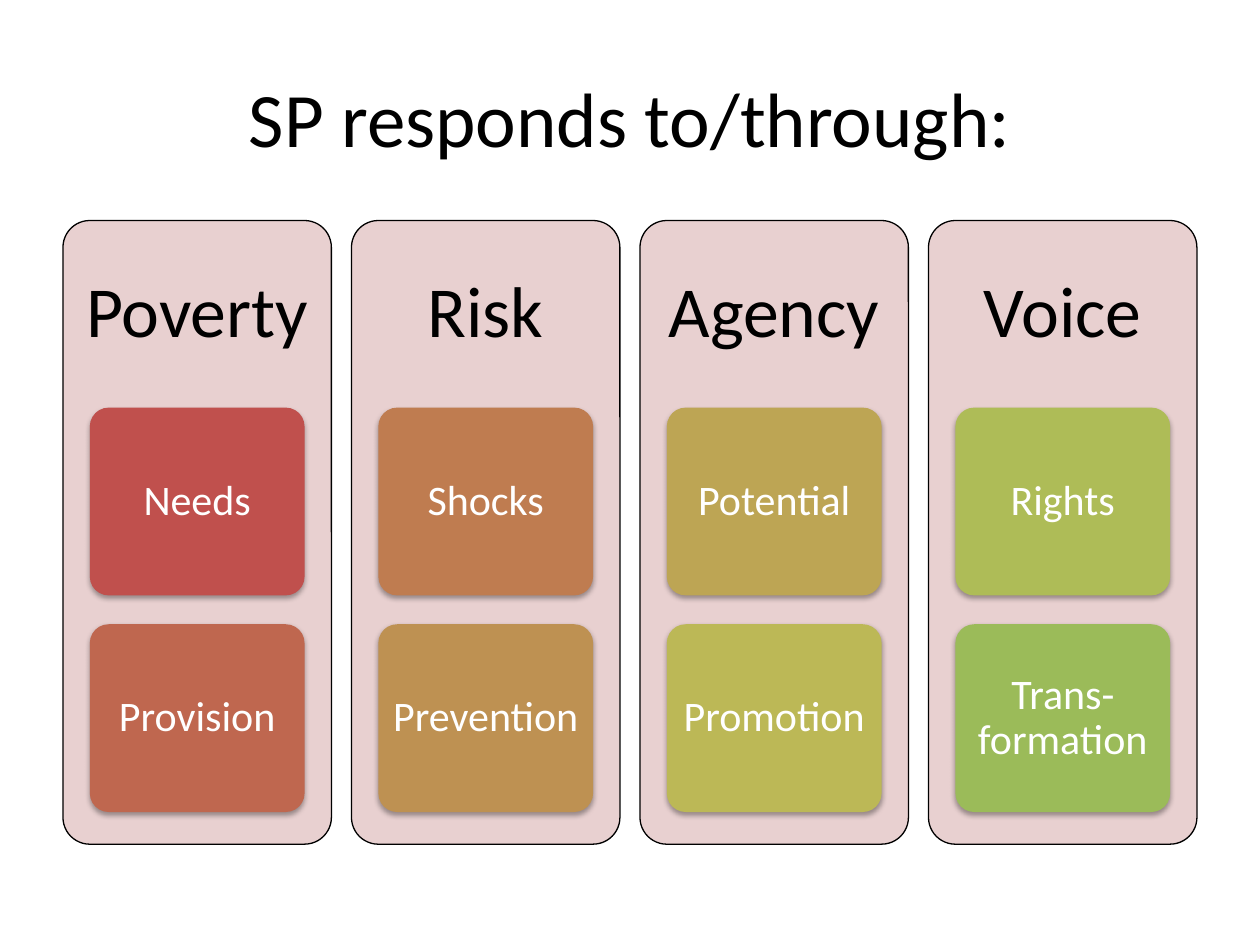
from lxml import etree
from pptx import Presentation
from pptx.dml.color import RGBColor
from pptx.enum.shapes import MSO_SHAPE
from pptx.enum.text import MSO_ANCHOR, PP_ALIGN
from pptx.oxml.ns import qn
from pptx.util import Pt

ROUNDED = MSO_SHAPE.ROUNDED_RECTANGLE
MIDDLE = MSO_ANCHOR.MIDDLE
CENTER = PP_ALIGN.CENTER
TITLE_ONLY = 5
FONT = "Calibri"

COLORS = {
    "ink": "000000",
    "card_text": "FFFFFF",
    "column": "E8D0D0",
    "Needs": "C0504D",
    "Provision": "BF674F",
    "Shocks": "BF7C50",
    "Prevention": "BE9152",
    "Potential": "BDA554",
    "Promotion": "BCB856",
    "Rights": "AEBC57",
    "Trans-formation": "9BBB59",
}

RESPONSES = {
    "Poverty": ["Needs", "Provision"],
    "Risk": ["Shocks", "Prevention"],
    "Agency": ["Potential", "Promotion"],
    "Voice": ["Rights", "Trans-formation"],
}


def color(key):
    return RGBColor.from_string(COLORS[key])


def write(shape, text, size, ink, line_spacing, inset_x, inset_y):
    frame = shape.text_frame
    frame.text = text
    frame.word_wrap = True
    frame.vertical_anchor = MIDDLE
    frame.margin_left = frame.margin_right = Pt(inset_x)
    frame.margin_top = frame.margin_bottom = Pt(inset_y)
    paragraph = frame.paragraphs[0]
    paragraph.alignment = CENTER
    paragraph.line_spacing = line_spacing
    font = paragraph.runs[0].font
    font.name = FONT
    font.size = Pt(size)
    font.color.rgb = color(ink)


def add_panel(slide, fill, left, top, width, height):
    panel = slide.shapes.add_shape(ROUNDED, Pt(left), Pt(top), Pt(width), Pt(height))
    panel.adjustments[0] = 0.1
    panel.shadow.inherit = False
    panel.fill.solid()
    panel.fill.fore_color.rgb = color(fill)
    return panel


def add_soft_shadow(shape):
    effects = shape._element.spPr.find(qn("a:effectLst"))
    shadow = etree.SubElement(
        effects, qn("a:outerShdw"),
        blurRad=str(Pt(3.1)), dist=str(Pt(1.8)), dir="5400000", rotWithShape="0",
    )
    tint = etree.SubElement(shadow, qn("a:srgbClr"), val=COLORS["ink"])
    etree.SubElement(tint, qn("a:alpha"), val="35000")


def add_title(slide, left, top, width, height):
    title = slide.shapes.title
    title.left, title.top = Pt(left), Pt(top)
    title.width, title.height = Pt(width), Pt(height)
    write(title, "SP responds to/through:", 44, "ink", 1.0, 7.2, 3.6)


def add_card(slide, label, left, top, width, height):
    card = add_panel(slide, label, left, top, width, height)
    card.line.fill.background()
    add_soft_shadow(card)
    write(card, label, 24, "card_text", 0.9, 5, 3.6)


def add_column(slide, heading, cards, left, top, width, height):
    column = add_panel(slide, "column", left, top, width, height)
    column.line.color.rgb = color("ink")
    column.line.width = Pt(0.75)

    heading_height = 0.3 * height
    heading_box = slide.shapes.add_textbox(
        Pt(left), Pt(top), Pt(width), Pt(heading_height)
    )
    write(heading_box, heading, 41, "ink", 0.9, 12, 12)

    card_width = 0.8 * width
    card_height = 107.3
    card_gap = 16.5
    for row, label in enumerate(cards):
        card_top = top + heading_height + row * (card_height + card_gap)
        add_card(slide, label, left + 0.1 * width, card_top, card_width, card_height)


def add_columns(slide, left, top, width, height):
    column_width = 153.4
    pitch = (width - column_width) / (len(RESPONSES) - 1)
    for index, (heading, cards) in enumerate(RESPONSES.items()):
        add_column(slide, heading, cards, left + index * pitch, top, column_width, height)


def main():
    presentation = Presentation()
    presentation.slide_width = Pt(720)
    presentation.slide_height = Pt(540)
    slide = presentation.slides.add_slide(presentation.slide_layouts[TITLE_ONLY])
    add_title(slide, 36, 21.6, 648, 90)
    add_columns(slide, 36, 126, 648, 356.4)
    presentation.save("out.pptx")


if __name__ == "__main__":
    main()
